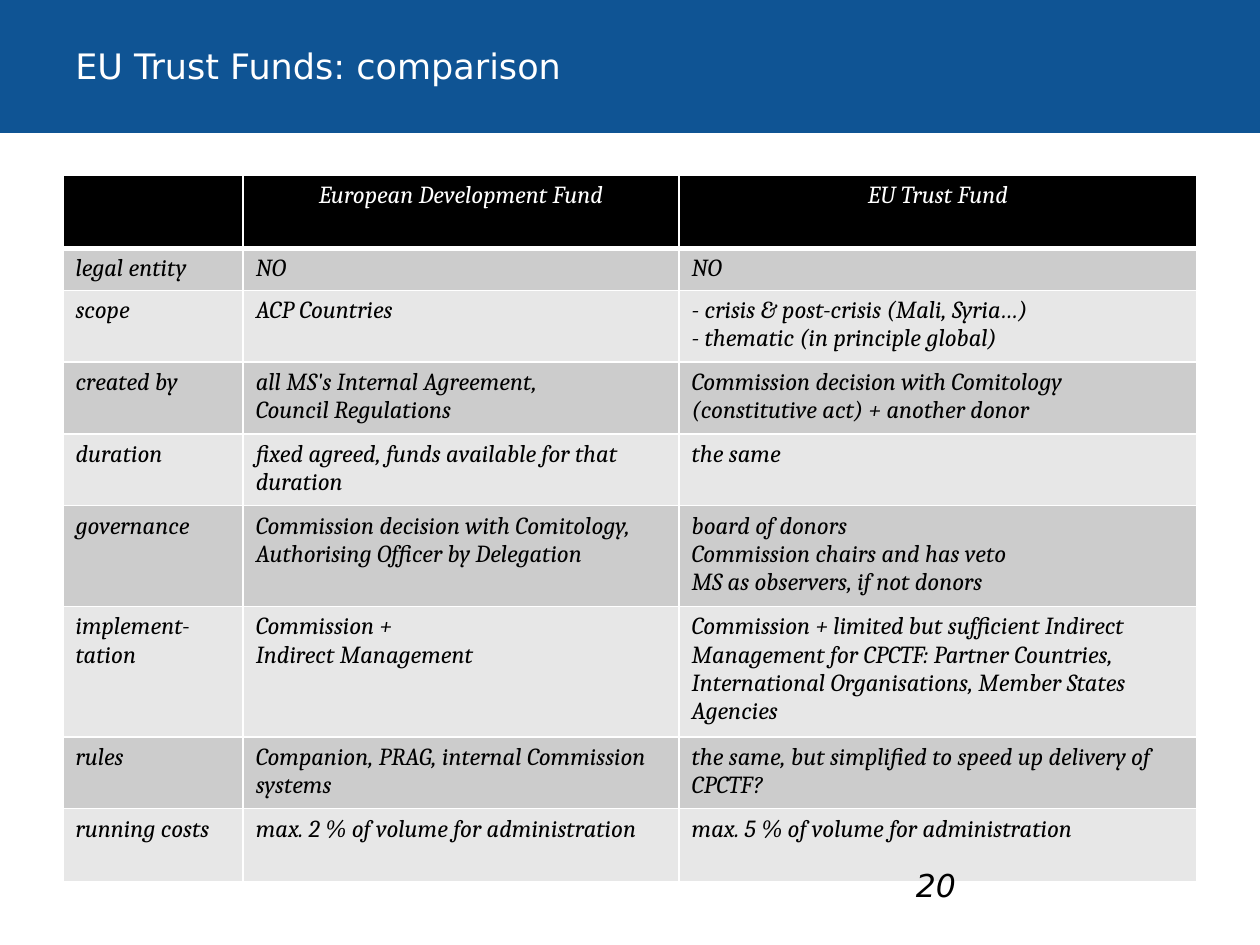
import pptx
import pptx.util
import pptx.dml.color
import pptx.enum.shapes
import pptx.enum.text
import pptx.oxml
import pptx.oxml.ns


def colour(value):
    return pptx.dml.color.RGBColor.from_string(value)


def add_line_of_text(slide, box, text, size, ink, italic):
    frame = slide.shapes.add_textbox(*box).text_frame
    frame.word_wrap = True
    paragraph = frame.paragraphs[0]
    paragraph.text = text
    paragraph.font.name = "DejaVu Sans"
    paragraph.font.size = pptx.util.Pt(size)
    paragraph.font.italic = italic
    paragraph.font.color.rgb = colour(ink)


deck = pptx.Presentation()
deck.slide_width = pptx.util.Inches(10)
deck.slide_height = pptx.util.Inches(7.5)
width, height = deck.slide_width, deck.slide_height
margin = int(width * 0.05)
content_width = width - 2 * margin
slide = deck.slides.add_slide(deck.slide_layouts[6])

banner = slide.shapes.add_shape(
    pptx.enum.shapes.MSO_SHAPE.RECTANGLE, 0, 0, width, int(height * 0.14))
banner.shadow.inherit = False
banner.fill.solid()
banner.fill.fore_color.rgb = colour("0F5494")
banner.line.color.rgb = colour("0F5494")
banner.line.width = pptx.util.Pt(0.75)

add_line_of_text(
    slide, (margin, int(height * 0.04), content_width, height // 6),
    "EU Trust Funds: comparison", 20, "FFFFFF", False)

comparison = [
    ("", "European Development Fund", "EU Trust Fund"),
    ("legal entity", "NO", "NO"),
    ("scope", "ACP Countries",
     "- crisis & post-crisis (Mali, Syria…)\n- thematic (in principle global)"),
    ("created by", "all MS's Internal Agreement,\nCouncil Regulations",
     "Commission decision with Comitology (constitutive act) + another donor"),
    ("duration", "fixed agreed, funds available for that duration", "the same"),
    ("governance",
     "Commission decision with Comitology,\nAuthorising Officer by Delegation",
     "board of donors\nCommission chairs and has veto\nMS as observers, if not donors"),
    ("implement-tation", "Commission +\nIndirect Management",
     "Commission + limited but sufficient Indirect Management for CPCTF: "
     "Partner Countries, International Organisations, Member States Agencies"),
    ("rules", "Companion, PRAG, internal Commission systems",
     "the same, but simplified to speed up delivery of CPCTF?"),
    ("running costs", "max. 2 % of volume for administration",
     "max. 5 % of volume for administration"),
]
column_widths = [1.43, 3.46, 4.11]
row_heights = [0.58, 0.33, 0.57, 0.57, 0.57, 0.8, 1.03, 0.57, 0.58]

table = slide.shapes.add_table(
    len(row_heights), len(column_widths), margin, pptx.util.Inches(1.39),
    content_width, pptx.util.Inches(sum(row_heights))).table
for column, column_width in zip(table.columns, column_widths):
    column.width = pptx.util.Inches(column_width)
for row, row_height in zip(table.rows, row_heights):
    row.height = pptx.util.Inches(row_height)

for row_number, entries in enumerate(comparison):
    is_header = row_number == 0
    background = "000000" if is_header else ("E7E7E7", "CCCCCC")[row_number % 2]
    for column_number, entry in enumerate(entries):
        cell = table.cell(row_number, column_number)
        cell.text = entry
        cell.fill.solid()
        cell.fill.fore_color.rgb = colour(background)
        for paragraph in cell.text_frame.paragraphs:
            paragraph.font.name = "Cambria"
            paragraph.font.size = pptx.util.Pt(14)
            paragraph.font.bold = False
            paragraph.font.italic = True
            paragraph.font.color.rgb = colour("FFFFFF" if is_header else "000000")
            if is_header:
                paragraph.alignment = pptx.enum.text.PP_ALIGN.CENTER
        properties = cell._tc.get_or_add_tcPr()
        for position, side in enumerate("LRTB"):
            thickness = pptx.util.Pt(3 if is_header and side == "B" else 1)
            properties.insert(position, pptx.oxml.parse_xml(
                f'<a:ln{side} {pptx.oxml.ns.nsdecls("a")} w="{thickness}"><a:solidFill>'
                f'<a:srgbClr val="FFFFFF"/></a:solidFill></a:ln{side}>'))

add_line_of_text(
    slide, (int(width * 0.717), int(height * 0.91), int(width * 0.233), int(height * 0.07)),
    "20", 18, "000000", True)

deck.save("out.pptx")
